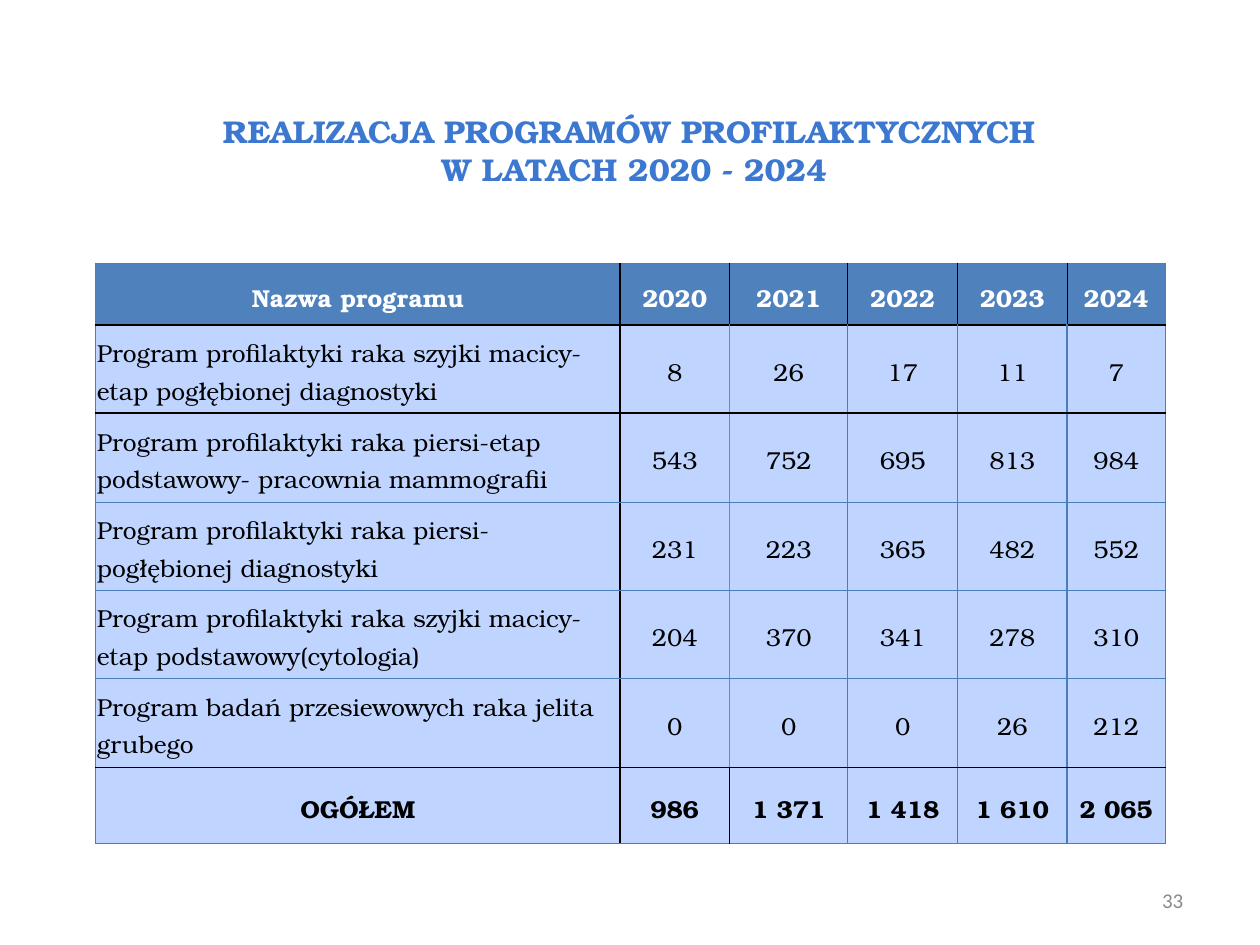
from dataclasses import dataclass

from lxml import etree
from pptx import Presentation
from pptx import util as u
from pptx.dml.color import RGBColor
from pptx.enum import text
from pptx.oxml import ns

LEFT, CENTER, RIGHT = (text.PP_ALIGN.LEFT, text.PP_ALIGN.CENTER,
                       text.PP_ALIGN.RIGHT)


@dataclass(frozen=True)
class Theme:
    serif: str = "TeX Gyre Bonum"
    sans: str = "Calibri"
    title_size: int = 18
    table_size: int = 14
    number_size: int = 12
    title: str = "3C78D0"
    number: str = "8B8B8B"
    head_fill: str = "4F81BD"
    body_fill: str = "BFD4FE"
    head_text: str = "FFFFFF"
    body_text: str = "000000"
    thin_blue: tuple = ("4A7EBB", 0.75)
    pale_blue: tuple = ("558ED5", 0.96)
    thin_black: tuple = ("000000", 0.5)
    black: tuple = ("000000", 0.96)


COLUMNS = [4.16, 0.87, 0.94, 0.87, 0.87, 0.78]
ROW_HEIGHTS = [0.49, 0.69, 0.71, 0.63, 0.63, 0.71, 0.6]
PROGRAMS = [
    ["Nazwa programu", "2020", "2021", "2022", "2023", "2024"],
    ["Program profilaktyki raka szyjki macicy-etap pogłębionej diagnostyki",
     "8", "26", "17", "11", "7"],
    ["Program profilaktyki raka piersi-etap podstawowy- pracownia mammografii",
     "543", "752", "695", "813", "984"],
    ["Program profilaktyki raka piersi- pogłębionej diagnostyki",
     "231", "223", "365", "482", "552"],
    ["Program profilaktyki raka szyjki macicy-etap podstawowy(cytologia)",
     "204", "370", "341", "278", "310"],
    ["Program badań przesiewowych raka jelita grubego",
     "0", "0", "0", "26", "212"],
    ["OGÓŁEM", "986", "1 371", "1 418", "1 610", "2 065"],
]
LAST_ROW, LAST_COLUMN = len(PROGRAMS) - 1, len(COLUMNS) - 1


def set_all(target, values):
    for name, value in values.items():
        setattr(target, name, value)


class SlideBuilder:
    def __init__(self, slide, theme):
        self.slide, self.theme = slide, theme

    def add_text(self, p, content, color, size, font, bold=False, **layout):
        set_all(p, layout)
        r = p.add_run()
        r.text = content
        set_all(r.font, {"name": font, "size": u.Pt(size), "bold": bold})
        r.font.color.rgb = RGBColor.from_string(color)

    def text_box(self, box, lines, anchor, **style):
        sp = self.slide.shapes.add_textbox(*map(u.Inches, box))
        tf = sp.text_frame
        set_all(tf, {"word_wrap": True, "vertical_anchor": anchor})
        for i, line in enumerate(lines):
            p = tf.add_paragraph() if i else tf.paragraphs[0]
            self.add_text(p, line, **style)

    def column_edge(self, row, edge):
        """Line on the vertical grid edge beside a row's cell."""
        t = self.theme
        if edge in (0, LAST_COLUMN + 1):
            return t.thin_blue
        if edge == 1:
            return t.black
        if row == 0:
            return t.thin_black
        if edge == 2:
            return t.black if row == LAST_ROW else t.pale_blue
        return t.thin_blue

    def row_edge(self, edge):
        return self.theme.black if edge in (1, 2, LAST_ROW) else self.theme.thin_blue

    def borders(self, cell, row, column):
        tc_pr = cell._tc.get_or_add_tcPr()
        edges = {"a:lnL": self.column_edge(row, column),
                 "a:lnR": self.column_edge(row, column + 1),
                 "a:lnT": self.row_edge(row),
                 "a:lnB": self.row_edge(row + 1)}
        for i, (tag, (color, width)) in enumerate(edges.items()):
            ln = etree.Element(ns.qn(tag), w=str(u.Pt(width)))
            fill = etree.SubElement(ln, ns.qn("a:solidFill"))
            etree.SubElement(fill, ns.qn("a:srgbClr"), val=color)
            tc_pr.insert(i, ln)

    def cell(self, cell, row, column, content):
        t = self.theme
        head, total = row == 0, row == LAST_ROW
        set_all(cell, {"margin_left": u.Inches(0.01),
                       "margin_right": u.Inches(0.01),
                       "margin_top": u.Inches(0.05),
                       "margin_bottom": u.Inches(0.05),
                       "vertical_anchor": text.MSO_ANCHOR.MIDDLE})
        cell.fill.solid()
        cell.fill.fore_color.rgb = RGBColor.from_string(
            t.head_fill if head else t.body_fill)
        is_name = column == 0 and not (head or total)
        self.add_text(cell.text_frame.paragraphs[0], content,
                      t.head_text if head else t.body_text, t.table_size,
                      t.serif, bold=head or total, line_spacing=1.15,
                      alignment=LEFT if is_name else CENTER,
                      space_after=u.Pt(10 if is_name and row > 1 else 0))
        self.borders(cell, row, column)

    def table(self, left, top, rows):
        size = map(u.Inches, (left, top, sum(COLUMNS), sum(ROW_HEIGHTS)))
        table = self.slide.shapes.add_table(len(rows), len(COLUMNS), *size).table
        set_all(table, {"first_row": False, "horz_banding": False})
        for column, width in zip(table.columns, COLUMNS):
            column.width = u.Inches(width)
        for i, (height, values) in enumerate(zip(ROW_HEIGHTS, rows)):
            table.rows[i].height = u.Inches(height)
            for j, value in enumerate(values):
                self.cell(table.cell(i, j), i, j, value)


def main():
    prs = Presentation()
    set_all(prs, {"slide_width": u.Inches(10), "slide_height": u.Inches(7.5)})
    theme = Theme()
    s = SlideBuilder(prs.slides.add_slide(prs.slide_layouts[6]), theme)
    s.table(0.76, 2.09, PROGRAMS)
    s.text_box((7.17, 6.95, 2.32, 0.39), ["33"], text.MSO_ANCHOR.MIDDLE,
               color=theme.number, size=theme.number_size, font=theme.sans,
               alignment=RIGHT)
    s.text_box((0.83, 0.84, 8.41, 0.7),
               ["REALIZACJA PROGRAMÓW PROFILAKTYCZNYCH ", "W LATACH 2020 - 2024"],
               text.MSO_ANCHOR.TOP, color=theme.title, size=theme.title_size,
               font=theme.serif, bold=True, alignment=CENTER)
    prs.save("out.pptx")


if __name__ == "__main__":
    main()
